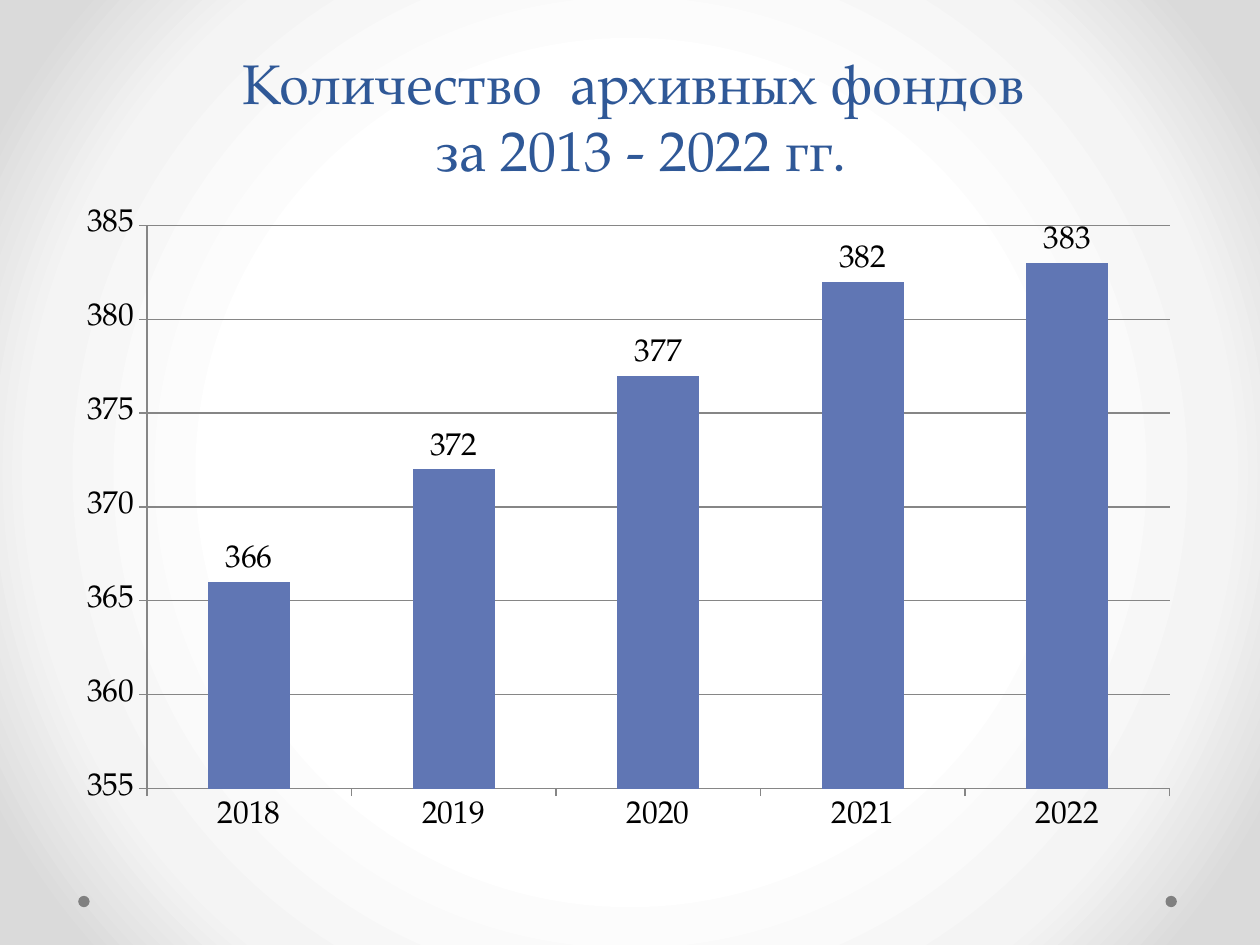
from dataclasses import dataclass

import lxml.etree
import pptx
import pptx.chart.data
import pptx.dml.color
import pptx.enum.chart
import pptx.enum.shapes
import pptx.enum.text
import pptx.oxml
import pptx.oxml.ns
import pptx.util

Pt = pptx.util.Pt
RGBColor = pptx.dml.color.RGBColor

FONT = "TeX Gyre Pagella"
BLACK = RGBColor(0x00, 0x00, 0x00)
GRAY = RGBColor(0x80, 0x80, 0x80)
AXIS_GRAY = RGBColor(0x86, 0x86, 0x86)
TITLE_BLUE = RGBColor(0x2F, 0x58, 0x97)
BAR_BLUE = RGBColor(0x60, 0x76, 0xB4)
GLOW_STOPS = (
    (50, RGBColor(0xFF, 0xFF, 0xFF)),
    (76, RGBColor(0xF4, 0xF4, 0xF4)),
    (92, RGBColor(0xDA, 0xDA, 0xDA)),
)


@dataclass(frozen=True)
class Dot:
    left: float
    top: float = 511.9
    size: float = 6.5


DOTS = (Dot(666), Dot(44.7))
FUNDS_BY_YEAR = {"2018": 366, "2019": 372, "2020": 377, "2021": 382, "2022": 383}


def paint_background(page) -> None:
    """Fill the page with a radial glow, white in the middle."""
    page.background.fill.solid()
    properties = page.background._cSld.bg.bgPr
    stops = "".join(
        f'<a:gs pos="{percent * 1000}"><a:srgbClr val="{color}"/></a:gs>'
        for percent, color in GLOW_STOPS
    )
    gradient = pptx.oxml.parse_xml(
        f'<a:gradFill {pptx.oxml.ns.nsdecls("a")} rotWithShape="1">'
        f"<a:gsLst>{stops}</a:gsLst>"
        '<a:path path="circle">'
        '<a:fillToRect l="50000" t="50000" r="50000" b="50000"/>'
        "</a:path></a:gradFill>"
    )
    properties.replace(properties[0], gradient)


def add_dot(page, dot: Dot) -> None:
    shape = page.shapes.add_shape(
        pptx.enum.shapes.MSO_SHAPE.OVAL,
        Pt(dot.left), Pt(dot.top), Pt(dot.size), Pt(dot.size),
    )
    shape.shadow.inherit = False
    shape.fill.solid()
    shape.fill.fore_color.rgb = GRAY
    shape.line.fill.background()


def add_title(page) -> None:
    box = page.shapes.add_textbox(Pt(48.2), Pt(40.3), Pt(635.8), Pt(67.7))
    frame = box.text_frame
    frame.word_wrap = True
    frame.vertical_anchor = pptx.enum.text.MSO_ANCHOR.BOTTOM
    para = frame.paragraphs[0]
    para.text = "Количество  архивных фондов \vза 2013 - 2022 гг."
    para.alignment = pptx.enum.text.PP_ALIGN.CENTER
    para.font.name = FONT
    para.font.size = Pt(32)
    para.font.color.rgb = TITLE_BLUE


def style_line(line) -> None:
    line.color.rgb = AXIS_GRAY
    line.width = Pt(0.75)


def set_plot_area(chart, x: float, y: float, width: float, height: float) -> None:
    """Fix the inner plot area, in fractions of the chart."""
    plot_area = chart._chartSpace.chart.plotArea
    for layout in plot_area.findall(pptx.oxml.ns.qn("c:layout")):
        plot_area.remove(layout)
    layout = lxml.etree.Element(pptx.oxml.ns.qn("c:layout"))
    manual = lxml.etree.SubElement(layout, pptx.oxml.ns.qn("c:manualLayout"))
    settings = {
        "layoutTarget": "inner", "xMode": "edge", "yMode": "edge",
        "x": x, "y": y, "w": width, "h": height,
    }
    for name, value in settings.items():
        lxml.etree.SubElement(manual, pptx.oxml.ns.qn(f"c:{name}"), val=str(value))
    plot_area.insert(0, layout)


def add_funds_chart(page) -> None:
    data = pptx.chart.data.CategoryChartData()
    data.categories = list(FUNDS_BY_YEAR)
    data.add_series("Series 1", list(FUNDS_BY_YEAR.values()))
    chart = page.shapes.add_chart(
        pptx.enum.chart.XL_CHART_TYPE.COLUMN_CLUSTERED,
        Pt(36.7), Pt(111.6), Pt(647.3), Pt(382.3), data,
    ).chart
    chart.has_title = False
    chart.has_legend = False
    chart.font.name = FONT
    chart.font.size = Pt(18)
    chart.font.color.rgb = BLACK
    set_plot_area(chart, 0.073, 0.045, 0.903, 0.842)

    for axis in (chart.category_axis, chart.value_axis):
        axis.major_tick_mark = pptx.enum.chart.XL_TICK_MARK.OUTSIDE
        axis.minor_tick_mark = pptx.enum.chart.XL_TICK_MARK.NONE
        style_line(axis.format.line)
    scale = chart.value_axis
    scale.minimum_scale = 355
    scale.maximum_scale = 385
    scale.major_unit = 5
    scale.has_major_gridlines = True
    style_line(scale.major_gridlines.format.line)

    plot = chart.plots[0]
    plot.gap_width = 150
    plot.vary_by_categories = False
    series = plot.series[0]
    series.format.fill.solid()
    series.format.fill.fore_color.rgb = BAR_BLUE
    labels = series.data_labels
    labels.show_value = True
    labels.position = pptx.enum.chart.XL_LABEL_POSITION.OUTSIDE_END


def main() -> None:
    deck = pptx.Presentation()
    deck.slide_width = Pt(720)
    deck.slide_height = Pt(540)
    page = deck.slides.add_slide(deck.slide_layouts[6])
    paint_background(page)
    for dot in DOTS:
        add_dot(page, dot)
    add_title(page)
    add_funds_chart(page)
    deck.save("out.pptx")


if __name__ == "__main__":
    main()
